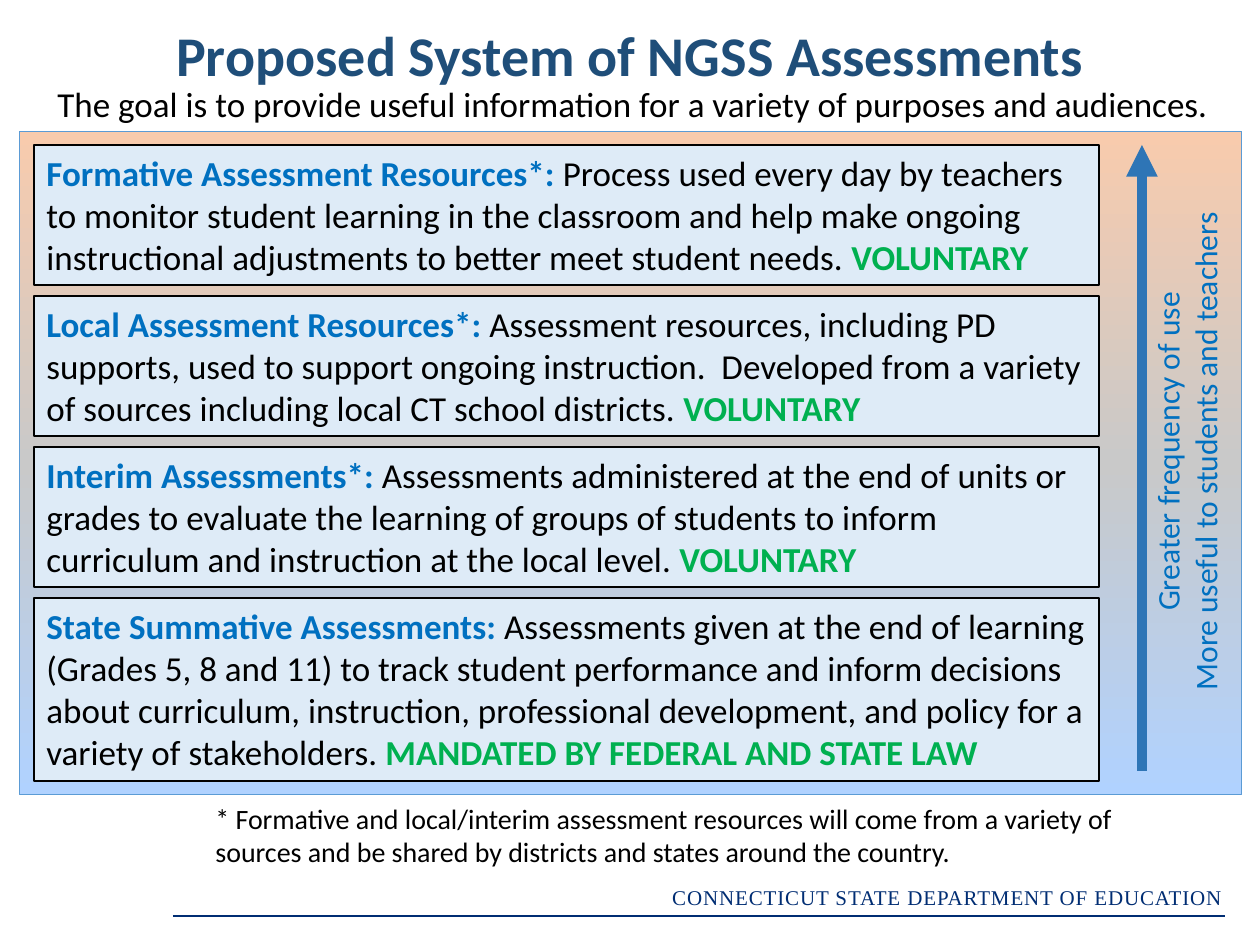
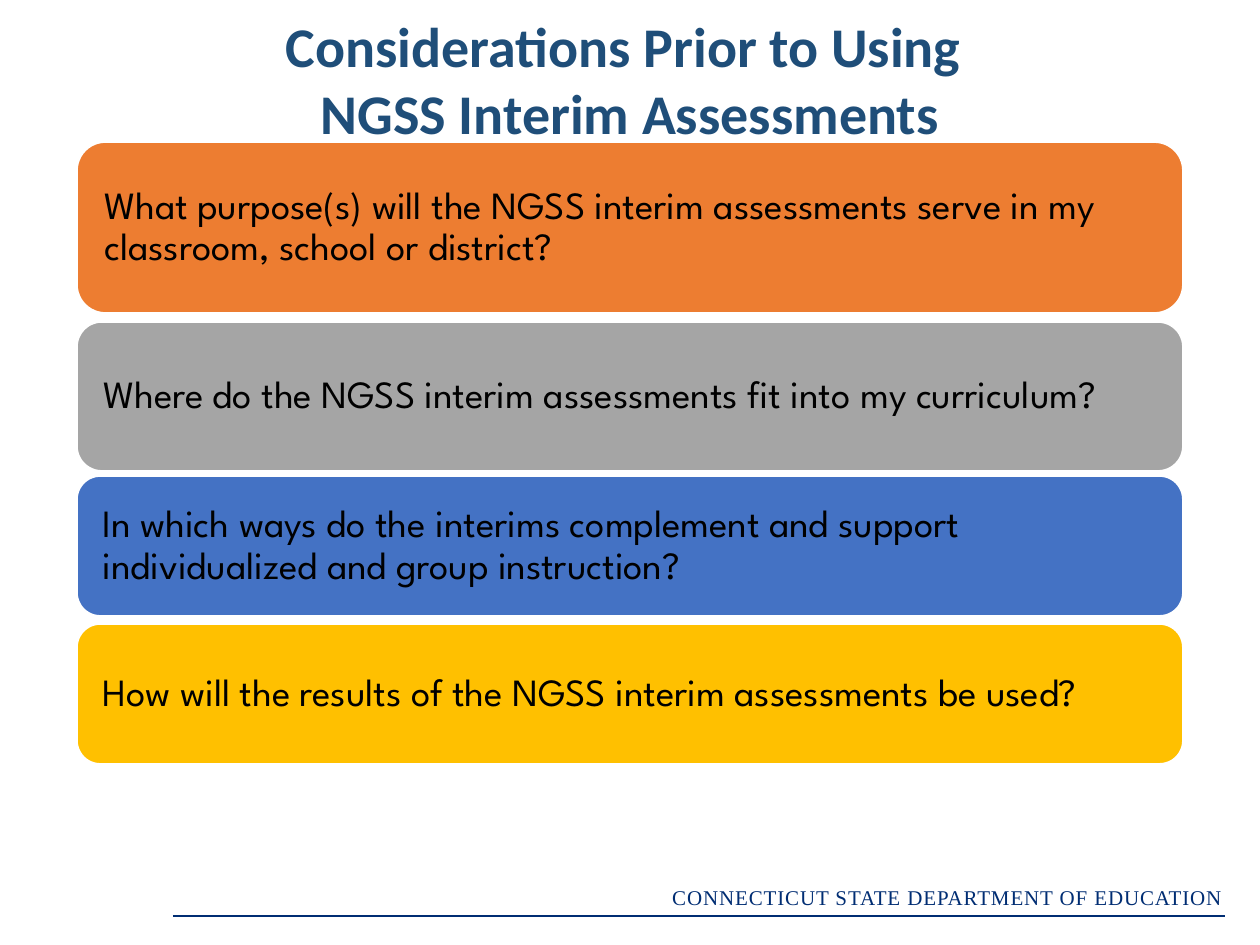
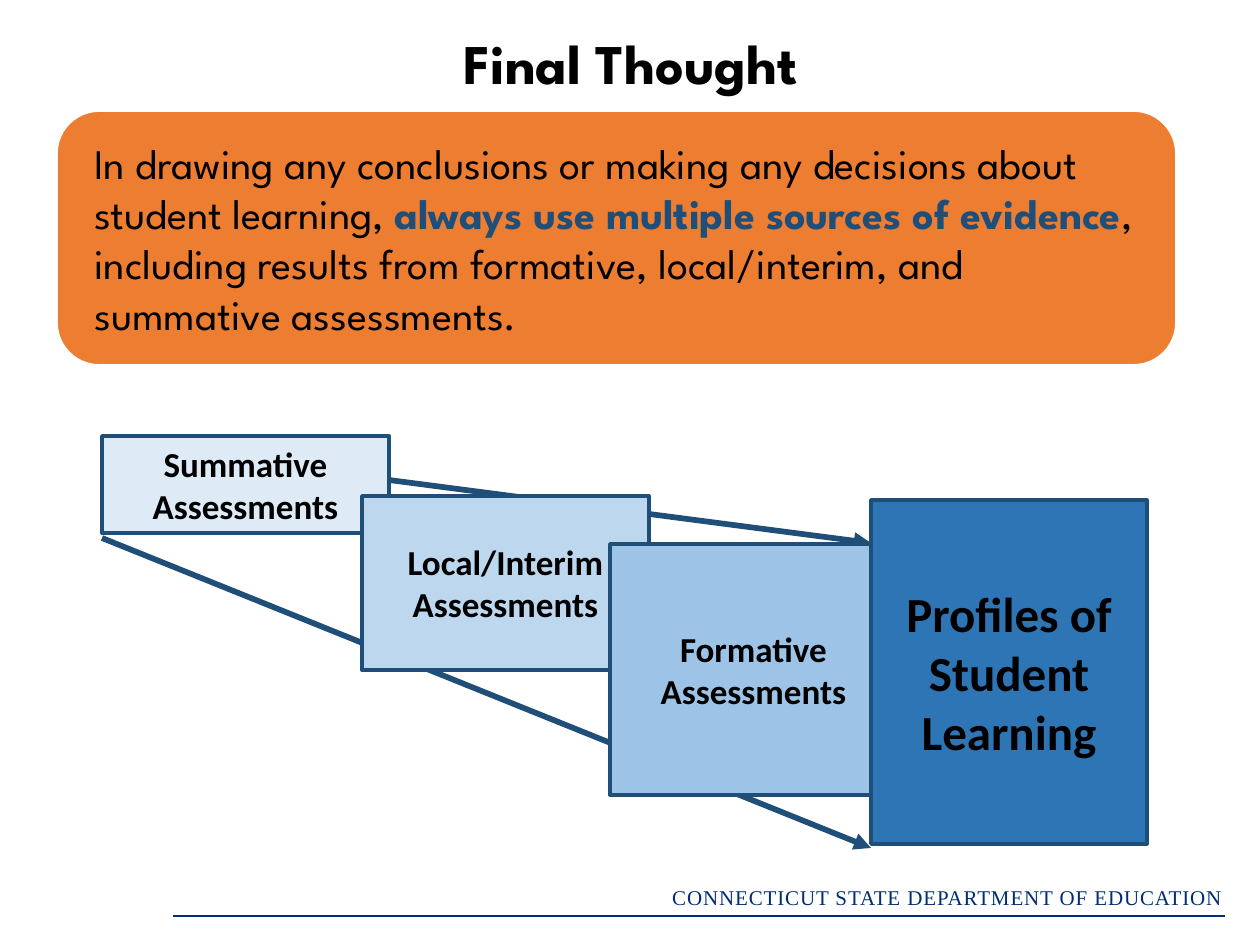
from copy import deepcopy

from lxml.etree import SubElement
from pptx import Presentation
from pptx.dml.color import RGBColor
from pptx.enum.shapes import MSO_CONNECTOR as Link, MSO_SHAPE as Form
from pptx.enum.text import MSO_ANCHOR as Anchor, PP_ALIGN as Align
from pptx.oxml.ns import qn
from pptx.util import Pt

SCALE = 914400 / 126
SANS, ROUND, SERIF = "Calibri", "League Spartan", "Times New Roman"
BLACK, WHITE, NAVY = "000000", "FFFFFF", "002D73"
DEEP, BLUE, STEEL, PALE = "1F4E79", "0070C0", "2E75B6", "DEEBF7"
GREEN, ORANGE = "00B050", "ED7D31"

LEVELS = [
    (140, "Formative Assessment Resources*: ",
     "Process used every day by teachers to monitor student learning in the "
     "classroom and help make ongoing instructional adjustments to better "
     "meet student needs. ", "VOLUNTARY"),
    (140, "Local Assessment Resources*: ",
     "Assessment resources, including PD supports, used to support ongoing "
     "instruction.  Developed from a variety of sources including local CT "
     "school districts. ", "VOLUNTARY"),
    (140, "Interim Assessments*: ",
     "Assessments administered at the end of units or grades to evaluate the "
     "learning of groups of students to inform curriculum and instruction at "
     "the local level. ", "VOLUNTARY"),
    (183, "State Summative Assessments: ",
     "Assessments given at the end of learning (Grades 5, 8 and 11) to track "
     "student performance and inform decisions about curriculum, instruction, "
     "professional development, and policy for a variety of stakeholders. ",
     "MANDATED BY FEDERAL AND STATE LAW"),
]

# top, height, fill, question
ASKS = [
    (0, 171, ORANGE, "What purpose(s) will the NGSS interim assessments serve "
     "in my classroom, school or district?"),
    (180, 149, "A5A5A5",
     "Where do the NGSS interim assessments fit into my curriculum?"),
    (334, 140, "4472C4", "In which ways do the interims complement and support "
     "individualized and group instruction?"),
    (482, 140, "FFC000",
     "How will the results of the NGSS interim assessments be used?"),
]

# left, top, width, height, fill, size, lines
STEPS = [
    (0, 0, 287, 97, PALE, 20, ["Summative", "Assessments"]),
    (260, 60, 287, 174, "BDD7EE", 20, ["Local/Interim", "Assessments"]),
    (508, 108, 287, 251, "9DC3E6", 20, ["Formative", "Assessments"]),
    (769, 64, 276, 344, STEEL, 28, ["Profiles of Student Learning"]),
]


def emu(*nums):
    return [round(n * SCALE) for n in nums]


def rgb(code):
    return RGBColor.from_string(code)


def write(shape, lines, size, color=BLACK, font=SANS, bold=False,
          align=Align.LEFT, anchor=Anchor.TOP, space=None, wrap=True):
    """Fill a shape; a line is a string or a list of (text, color, bold)."""
    frame = shape.text_frame
    frame.word_wrap = wrap
    frame.vertical_anchor = anchor
    for i, line in enumerate(lines):
        para = frame.add_paragraph() if i else frame.paragraphs[0]
        para.alignment = align
        if space:
            para.line_spacing = space
        parts = [(line, color, bold)] if isinstance(line, str) else line
        for text, tint, heavy in parts:
            run = para.add_run()
            run.text = text
            run.font.name = font
            run.font.size = Pt(size)
            run.font.bold = heavy
            run.font.color.rgb = rgb(tint)


def label(slide, box, lines, size, **style):
    shape = slide.shapes.add_textbox(*emu(*box))
    write(shape, lines, size, **style)
    return shape


def title(slide, box, lines, color=DEEP, **style):
    label(slide, box, lines, 32, color=color, bold=True, align=Align.CENTER,
          anchor=Anchor.MIDDLE, **style)


def block(slide, box, fill, edge, width, form=Form.RECTANGLE):
    shape = slide.shapes.add_shape(form, *emu(*box))
    shape.shadow.inherit = False
    if fill:
        shape.fill.solid()
        shape.fill.fore_color.rgb = rgb(fill)
    shape.line.color.rgb = rgb(edge)
    shape.line.width = Pt(width)
    return shape


def card(slide, box, fill, line, size, inset, space=None):
    """Rounded panel with its text set in from the edges."""
    shape = block(slide, box, fill, WHITE, 1, Form.ROUNDED_RECTANGLE)
    frame = shape.text_frame
    frame.margin_left = frame.margin_right = emu(inset)[0]
    write(shape, [line], size, font=ROUND, anchor=Anchor.MIDDLE, space=space)


def rule(slide, start, end, color, width, arrow=False):
    wire = slide.shapes.add_connector(Link.STRAIGHT, *emu(*start, *end))
    wire.line.color.rgb = rgb(color)
    wire.line.width = Pt(width)
    props = wire._element.spPr
    if arrow:
        SubElement(props.find(qn("a:ln")), qn("a:tailEnd"), type="triangle")
    SubElement(props, qn("a:effectLst"))


def footer(slide):
    rule(slide, (173, 916), (1225, 916), NAVY, 0.75)
    shape = label(slide, (653, 878, 582, 38),
                  ["CONNECTICUT STATE DEPARTMENT OF EDUCATION"], 12,
                  color=NAVY, font=SERIF, align=Align.RIGHT)
    shape.text_frame.paragraphs[0].runs[0].font._element.set("spc", "50")


def blend(shape, colors):
    """Top-to-bottom gradient through three colors."""
    fill = shape.fill
    fill.gradient()
    fill.gradient_angle = 270
    first = shape._element.spPr.find(".//" + qn("a:gs"))
    first.addnext(deepcopy(first))
    for i, (stop, color) in enumerate(zip(fill.gradient_stops, colors)):
        stop.position = i / 2
        stop.color.rgb = rgb(color)


def ladder(slide, box):
    """Four assessment levels beside an upward arrow."""
    left, top, wide, high = box
    panel = block(slide, box, None, "5B9BD5", 0.5)
    blend(panel, ["F8CBAD", "C9C9C9", "B0D2FF"])
    y = top + 14
    for tall, name, text, status in LEVELS:
        shape = block(slide, (left + 15, y, 1065, tall), PALE, BLACK, 1)
        write(shape, [[(name, BLUE, True), (text, BLACK, False),
                       (status, GREEN, True)]], 20)
        y += tall + 11
    x = left + wide - 100
    rule(slide, (x, top + high - 24), (x, top + 14), STEEL, 6, arrow=True)
    side = label(slide, (left + 913, top + 276, 509, 89),
                 ["Greater frequency of use",
                  "More useful to students and teachers"], 18,
                 color=BLUE, align=Align.CENTER, wrap=False)
    side.rotation = 270


def asks(slide, box):
    left, top, wide = box
    for y, tall, fill, text in ASKS:
        card(slide, (left, top + y, wide, tall), fill, text, 22, 19, 0.9)


def flow(slide, box):
    """Overlapping steps that widen toward the student profile."""
    left, top = box
    for x, y, to_x, to_y in [(287, 44, 769, 107), (0, 102, 769, 412)]:
        rule(slide, (left + x, top + y), (left + to_x, top + to_y),
             DEEP, 3.25, arrow=True)
    for x, y, wide, tall, fill, size, lines in STEPS:
        shape = block(slide, (left + x, top + y, wide, tall), fill, DEEP, 2)
        write(shape, lines, size, bold=True, align=Align.CENTER,
              anchor=Anchor.MIDDLE)


def system(slide):
    ladder(slide, (19, 131, 1223, 664))
    title(slide, (63, 19, 1134, 78), ["Proposed System of NGSS Assessments"],
          space=0.9)
    label(slide, (45, 76, 1178, 55),
          ["The goal is to provide useful information for a variety of "
           "purposes and audiences."], 20)
    label(slide, (203, 795, 1004, 81),
          ["* Formative and local/interim assessment resources will come from "
           "a variety of sources and be shared by districts and states around "
           "the country."], 16)


def prior(slide):
    asks(slide, (77, 142, 1106))
    title(slide, (0, 16, 1260, 126),
          ["Considerations Prior to Using ", "NGSS Interim Assessments"])


def final(slide):
    title(slide, (399, 13, 464, 98), ["Final Thought"], BLACK, font=ROUND)
    card(slide, (57, 111, 1119, 254), ORANGE, [
        ("In drawing any conclusions or making any decisions about student "
         "learning, ", BLACK, False),
        ("always use multiple sources of evidence", DEEP, True),
        (", including results from formative, local/interim, and summative "
         "assessments.", BLACK, False)], 24, 25)
    flow(slide, (102, 436))


def main():
    deck = Presentation()
    deck.slide_width, deck.slide_height = emu(1260, 945)
    for build in (system, prior, final):
        slide = deck.slides.add_slide(deck.slide_layouts[6])
        footer(slide)
        build(slide)
    deck.save("out.pptx")


if __name__ == "__main__":
    main()
